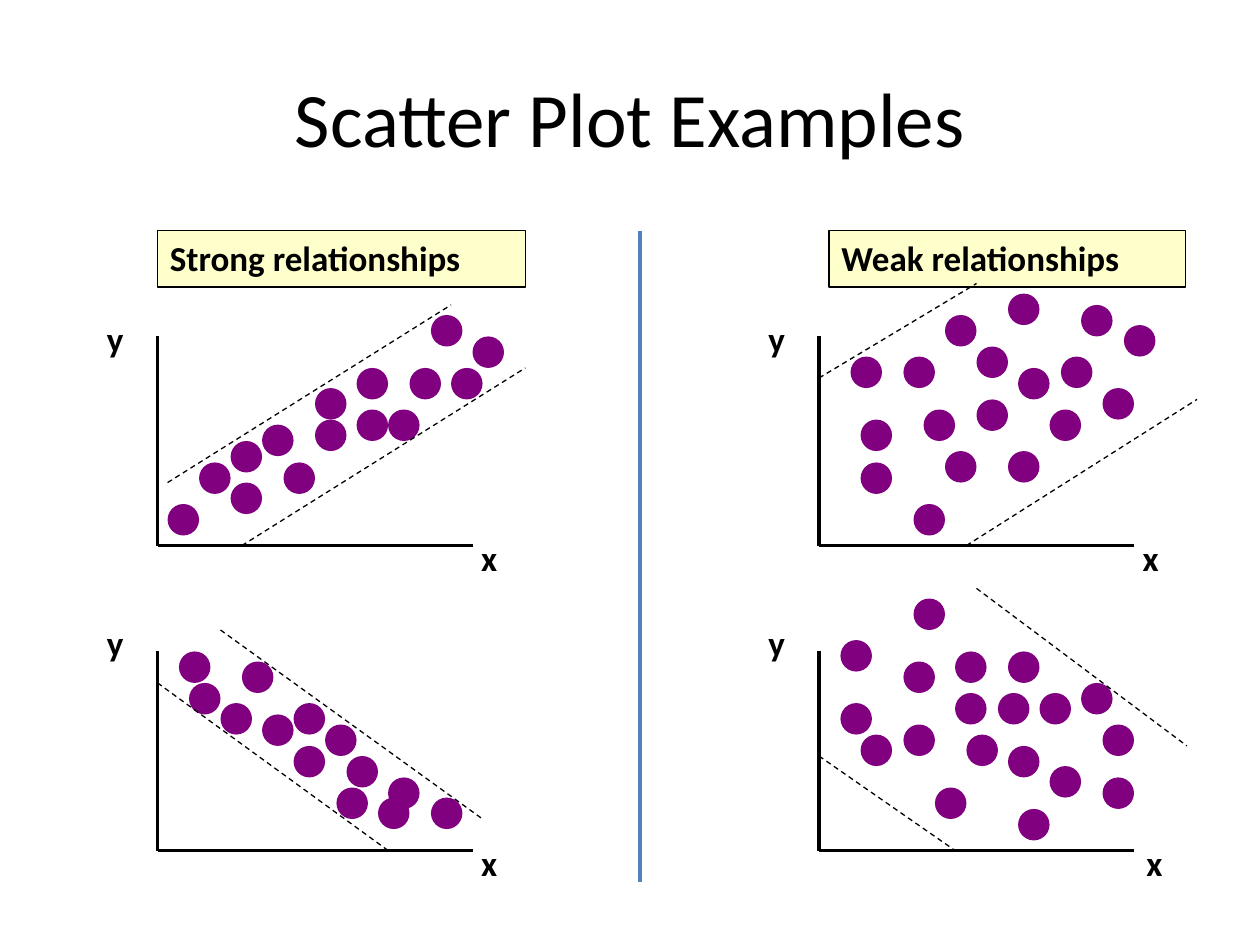
from lxml.etree import SubElement
from pptx import Presentation
from pptx.dml.color import RGBColor
from pptx.enum.dml import MSO_LINE
from pptx.enum.shapes import MSO_CONNECTOR, MSO_SHAPE
from pptx.enum.text import MSO_ANCHOR, MSO_AUTO_SIZE, PP_ALIGN
from pptx.oxml.ns import qn
from pptx.util import Inches, Pt

COLORS = {"ink": "000000", "dot": "800080", "label": "FFFFCC", "rule": "4F81BD"}
FONT = "Calibri"
DOT = 0.25  # dot diameter
WIDTH = 2.5  # length of each x axis

# Each plot: left edge, axis top, axis base, y label top, x label left,
# dashed band lines, and the top left corner of each dot
PLOTS = [
    # Strong, rising
    dict(left=1.25, top=2.67, base=4.33, ytop=2.47, xleft=3.72,
         bands=[(1.33, 3.83, 3.58, 2.42), (1.92, 4.33, 4.17, 2.92)],
         dots=[(1.33, 4), (1.58, 3.67), (3.42, 2.5), (3.58, 2.92), (1.83, 3.83),
               (3.75, 2.67), (2.83, 3.25), (2.83, 2.92), (3.25, 2.92),
               (2.5, 3.08), (1.83, 3.5), (2.08, 3.37), (3.08, 3.25),
               (2.5, 3.33), (2.25, 3.67)]),
    # Strong, falling
    dict(left=1.25, top=5.17, base=6.75, ytop=4.88, xleft=3.72,
         bands=[(1.75, 5, 3.83, 6.5), (1.25, 5.42, 3.08, 6.75)],
         dots=[(3, 6.33), (1.5, 5.42), (3.42, 6.33), (1.92, 5.25), (2.75, 6),
               (3.08, 6.17), (2.33, 5.58), (1.42, 5.17), (1.75, 5.58),
               (2.08, 5.67), (2.67, 6.25), (2.58, 5.75), (2.33, 5.92)]),
    # Weak, rising
    dict(left=6.5, top=2.67, base=4.33, ytop=2.47, xleft=8.97,
         bands=[(6.5, 3, 7.75, 2.25), (7.67, 4.33, 9.5, 3.17)],
         dots=[(7.75, 2.75), (6.83, 3.67), (8, 3.58), (8.42, 2.83), (7.17, 2.83),
               (7.25, 4), (7.5, 3.58), (8.08, 2.92), (7.5, 2.5), (6.83, 3.33),
               (6.75, 2.83), (7.33, 3.25), (8.33, 3.25), (7.75, 3.17),
               (8, 2.33), (8.92, 2.58), (8.75, 3.08), (8.58, 2.42)]),
    # Weak, falling
    dict(left=6.5, top=5.17, base=6.75, ytop=4.88, xleft=9,
         bands=[(7.75, 4.67, 9.42, 5.92), (6.5, 6, 7.58, 6.75)],
         dots=[(6.67, 5.58), (6.67, 5.08), (7.17, 5.75), (8.08, 6.42),
               (6.83, 5.83), (7.58, 5.17), (8, 5.92), (7.92, 5.5), (7.58, 5.5),
               (7.17, 5.25), (8.25, 5.5), (7.67, 5.83), (7.42, 6.25),
               (8.33, 6.08), (8.75, 5.75), (8.58, 5.42), (8.75, 6.17),
               (8, 5.17), (7.25, 4.75)]),
]


def color(name):
    return RGBColor.from_string(COLORS[name])


def write(frame, text, size=20, bold=True, align=PP_ALIGN.LEFT,
          anchor=MSO_ANCHOR.TOP, wrap=True, fit=MSO_AUTO_SIZE.SHAPE_TO_FIT_TEXT):
    frame.word_wrap = wrap
    frame.auto_size = fit
    frame.vertical_anchor = anchor
    par = frame.paragraphs[0]
    par.alignment = align
    run = par.add_run()
    run.text = text
    font = run.font
    font.name, font.size, font.bold = FONT, Pt(size), bold
    font.color.rgb = color("ink")


class Painter:
    """Holds the slide and the style of its elements."""

    def __init__(self, slide):
        self.shapes = slide.shapes

    def text(self, text, x, y, w, h, **style):
        box = self.shapes.add_textbox(Inches(x), Inches(y), Inches(w), Inches(h))
        write(box.text_frame, text, **style)

    def shape(self, kind, x, y, w, h, fill):
        item = self.shapes.add_shape(kind, Inches(x), Inches(y), Inches(w), Inches(h))
        item.shadow.inherit = False
        item.fill.solid()
        item.fill.fore_color.rgb = color(fill)
        item.line.fill.background()
        return item

    def dot(self, x, y):
        self.shape(MSO_SHAPE.OVAL, x, y, DOT, DOT, "dot")

    def label(self, text, x, y, w, h):
        box = self.shape(MSO_SHAPE.RECTANGLE, x, y, w, h, "label")
        box.line.color.rgb = color("ink")
        box.line.width = Pt(1)
        write(box.text_frame, text)

    def line(self, x1, y1, x2, y2, width=2, tint="ink", dash=None):
        line = self.shapes.add_connector(
            MSO_CONNECTOR.STRAIGHT, Inches(x1), Inches(y1), Inches(x2), Inches(y2))
        line.line.color.rgb = color(tint)
        line.line.width = Pt(width)
        if dash:
            line.line.dash_style = dash
        SubElement(line._element.spPr, qn("a:effectLst"))

    def plot(self, left, top, base, ytop, xleft, bands, dots):
        # Axes and their names
        self.line(left, top, left, base)
        self.line(left, base, left + WIDTH, base)
        self.text("y", left - 0.5, ytop, 0.36, 0.43, wrap=False)
        self.text("x", xleft, base - 0.12, 0.36, 0.43, wrap=False)
        # Points, then the band around them
        for dot in dots:
            self.dot(*dot)
        for band in bands:
            self.line(*band, width=0.75, dash=MSO_LINE.DASH)


def main():
    deck = Presentation()
    deck.slide_width, deck.slide_height = Inches(10), Inches(7.5)
    page = Painter(deck.slides.add_slide(deck.slide_layouts[6]))

    # Title
    page.text("Scatter Plot Examples", 0.5, 0.3, 9, 1.25, size=44, bold=False,
              align=PP_ALIGN.CENTER, anchor=MSO_ANCHOR.MIDDLE,
              fit=MSO_AUTO_SIZE.NONE)

    # Column headings and the rule between them
    page.label("Strong relationships", 1.25, 1.83, 2.92, 0.45)
    page.label("Weak relationships", 6.58, 1.83, 2.83, 0.45)
    page.line(5.08, 1.83, 5.08, 7, width=2.25, tint="rule")

    # Four scatter plots
    for plot in PLOTS:
        page.plot(**plot)

    deck.save("out.pptx")


if __name__ == "__main__":
    main()
